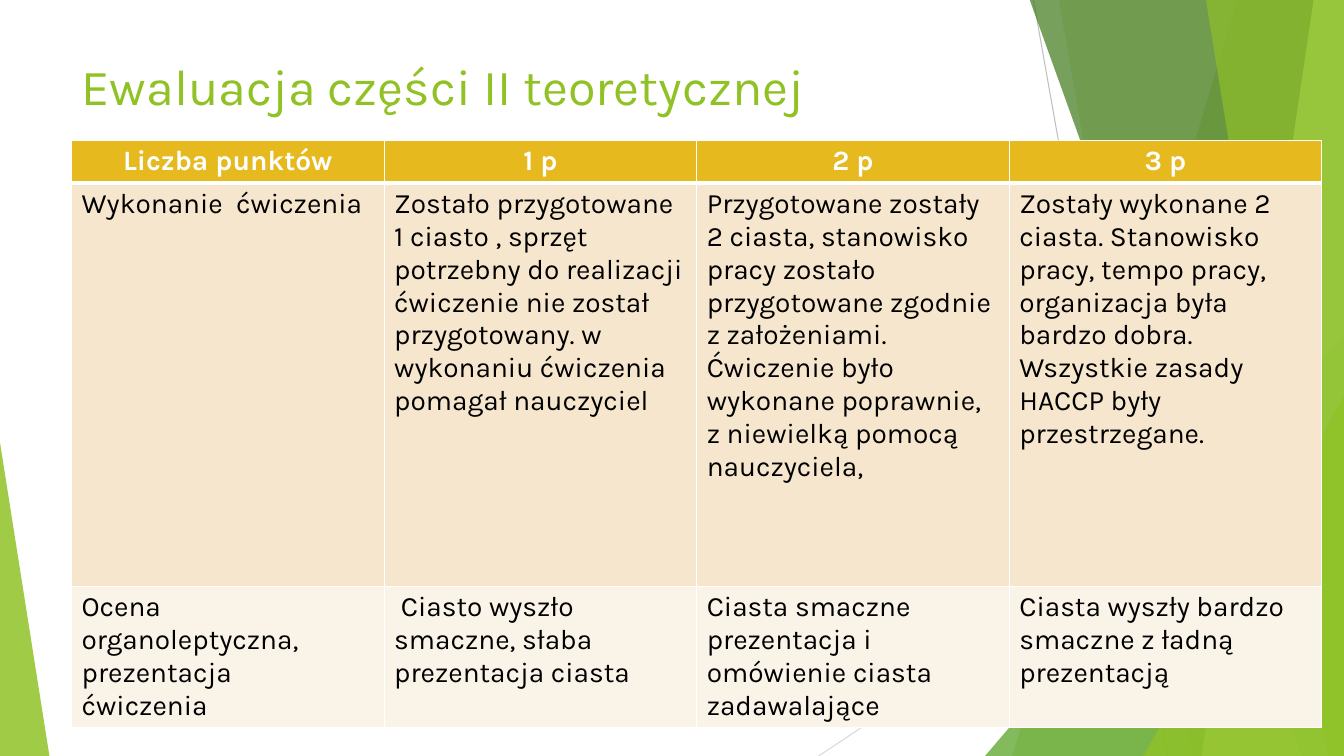
"""Build a slide with a scoring table for the second, theoretical part."""
import pptx
import pptx.dml.color
import pptx.enum.shapes
import pptx.enum.text
import pptx.oxml
import pptx.oxml.ns
import pptx.util

PX = 9144
FONT = "Karla"
HUES = {
    "lime": "90C226", "green": "54A021", "dark": "3F7819", "pale": "C0E474",
    "gold": "E6B91E", "sand": "F5E6CD", "cream": "FAF3E8",
    "white": "FFFFFF", "black": "000000", "grey": "BFBFBF", "mist": "D9D9D9",
}
SHAPE = pptx.enum.shapes.MSO_SHAPE
ALIGN = pptx.enum.text.PP_ALIGN
QN = pptx.oxml.ns.qn
ROWS = [
    ["Liczba punktów", "1 p", "2 p", "3 p"],
    ["Wykonanie  ćwiczenia",
     "Zostało przygotowane 1 ciasto , sprzęt potrzebny do realizacji ćwiczenie "
     "nie został przygotowany. w wykonaniu ćwiczenia pomagał nauczyciel",
     "Przygotowane zostały 2 ciasta, stanowisko pracy zostało przygotowane "
     "zgodnie z założeniami. Ćwiczenie było wykonane poprawnie, z niewielką "
     "pomocą nauczyciela,",
     "Zostały wykonane 2 ciasta. Stanowisko pracy, tempo pracy, organizacja "
     "była bardzo dobra. Wszystkie zasady HACCP były przestrzegane."],
    ["Ocena organoleptyczna,\nprezentacja\nćwiczenia",
     " Ciasto wyszło smaczne, słaba prezentacja ciasta",
     "Ciasta smaczne prezentacja i omówienie ciasta zadawalające",
     "Ciasta wyszły bardzo smaczne z ładną prezentacją"],
]


def rgb(hue):
    return pptx.dml.color.RGBColor.from_string(HUES[hue])


class Deck:
    def __init__(self, wide, high):
        self.show = pptx.Presentation()
        self.show.slide_width = wide * PX
        self.show.slide_height = high * PX
        self.slide = self.show.slides.add_slide(self.show.slide_layouts[5])
        self.items = self.slide.shapes

    def line(self, x1, y1, x2, y2, hue):
        kind = pptx.enum.shapes.MSO_CONNECTOR.STRAIGHT
        link = self.items.add_connector(kind, x1 * PX, y1 * PX, x2 * PX, y2 * PX)
        link.line.color.rgb = rgb(hue)
        link.line.width = pptx.util.Pt(0.75)
        link.element.spPr.append(pptx.oxml.parse_xml(
            f"<a:effectLst {pptx.oxml.ns.nsdecls('a')}/>"))

    def paint(self, shape, hue, alpha):
        shape.shadow.inherit = False
        shape.fill.solid()
        shape.fill.fore_color.rgb = rgb(hue)
        shape.line.fill.background()
        tint = shape.element.spPr.find(".//" + QN("a:srgbClr"))
        tint.append(pptx.oxml.parse_xml(
            f"<a:alpha {pptx.oxml.ns.nsdecls('a')} val='{alpha * 1000}'/>"))

    def blade(self, top, foot, hue, alpha):
        pen = self.items.build_freeform(top, -1, PX)
        pen.add_line_segments([(1333, -1), (1333, 750), (foot, 750)])
        self.paint(pen.convert_to_shape(), hue, alpha)

    def wedge(self, x, y, w, h, peak, hue, alpha):
        shape = self.items.add_shape(
            SHAPE.ISOSCELES_TRIANGLE, x * PX, y * PX, w * PX, h * PX)
        shape.adjustments[0] = peak
        self.paint(shape, hue, alpha)

    def style(self, frame, size, hue, bold, align):
        for para in frame.paragraphs:
            para.alignment = align
            for run in para.runs:
                run.font.name = FONT
                run.font.size = pptx.util.Pt(size)
                run.font.bold = bold
                run.font.color.rgb = rgb(hue)

    def title(self, text, x, y, w, h):
        head = self.items.title
        head.left, head.top, head.width, head.height = (
            n * PX for n in (x, y, w, h))
        frame = head.text_frame
        frame.text = text
        frame.word_wrap = True
        frame.auto_size = pptx.enum.text.MSO_AUTO_SIZE.NONE
        frame.vertical_anchor = pptx.enum.text.MSO_ANCHOR.TOP
        self.style(frame, 36, "lime", False, ALIGN.LEFT)
        head.element.getparent().append(head.element)

    def edge(self, cell, top, base):
        props = cell._tc.get_or_add_tcPr()
        for spot, (side, width) in enumerate(
                zip("LRTB", (1, 1, top, base))):
            props.insert(spot, pptx.oxml.parse_xml(
                f"<a:ln{side} {pptx.oxml.ns.nsdecls('a')} w='{width * 12700}'>"
                f"<a:solidFill><a:srgbClr val='{HUES['white']}'/></a:solidFill>"
                f"</a:ln{side}>"))

    def table(self, rows, x, y, wide, highs, fills):
        count = len(rows[0])
        grid = self.items.add_table(
            len(rows), count, x * PX, y * PX,
            wide * count * PX, sum(highs) * PX).table
        for col in grid.columns:
            col.width = wide * PX
        for r, texts in enumerate(rows):
            grid.rows[r].height = highs[r] * PX
            for c, text in enumerate(texts):
                cell = grid.cell(r, c)
                cell.text_frame.text = text
                cell.fill.solid()
                cell.fill.fore_color.rgb = rgb(fills[r])
                self.edge(cell, 3 if r == 1 else 1, 3 if r == 0 else 1)
                look = (("white", True, ALIGN.CENTER) if r == 0
                        else ("black", False, ALIGN.LEFT))
                self.style(cell.text_frame, 20, *look)


def main():
    deck = Deck(1333, 750)
    deck.line(1025, 0, 1158, 750, "grey")
    deck.line(1333, 403, 812, 750, "mist")
    deck.blade(1227, 1004, "lime", 30)
    deck.blade(1050, 1182, "lime", 20)
    deck.wedge(977, 333, 356, 417, 1, "green", 72)
    deck.blade(1021, 1291, "dark", 70)
    deck.blade(1303, 1192, "pale", 70)
    deck.blade(1196, 1317, "lime", 65)
    deck.wedge(1134, 393, 199, 357, 1, "lime", 80)
    deck.wedge(0, 439, 49, 311, 0, "lime", 85)
    deck.title("Ewaluacja części II teoretycznej", 71, 50, 1028, 89)
    deck.table(ROWS, 71, 139, 310, [42, 400, 140], ["gold", "sand", "cream"])
    deck.show.save("out.pptx")


if __name__ == "__main__":
    main()
